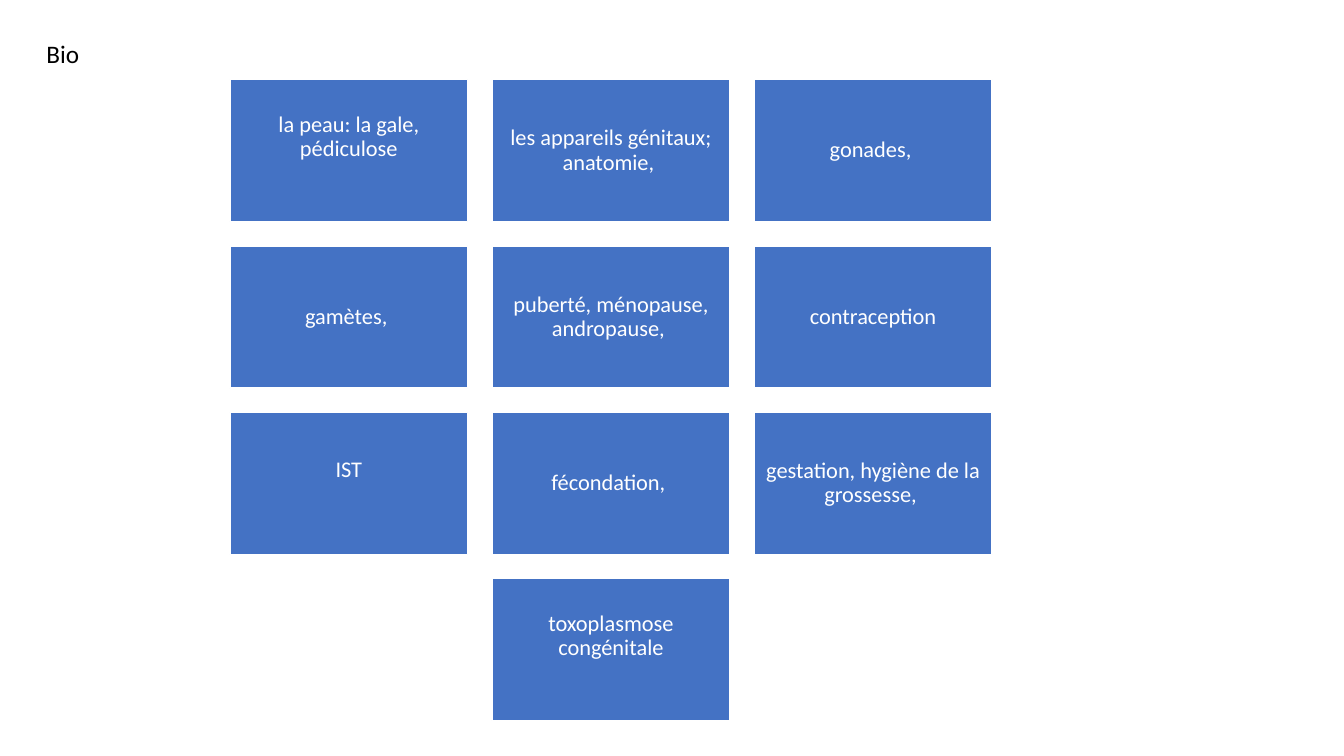
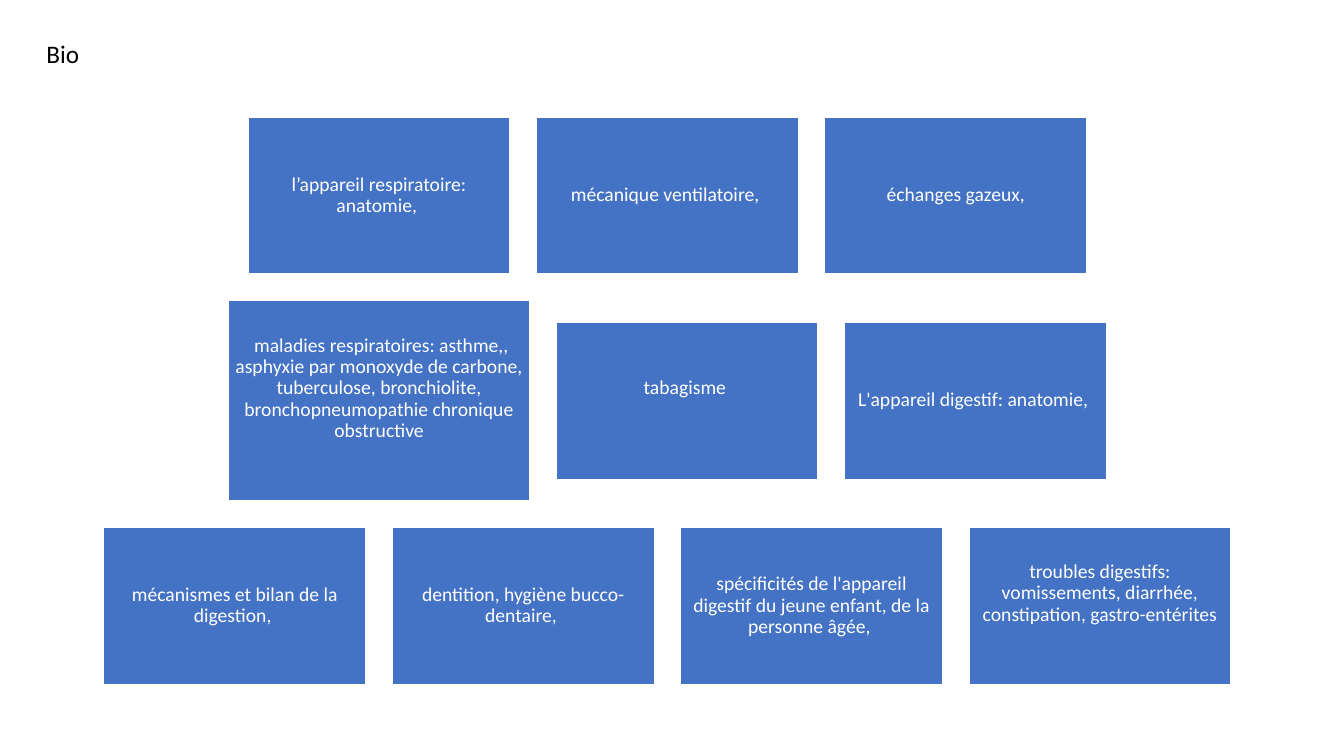
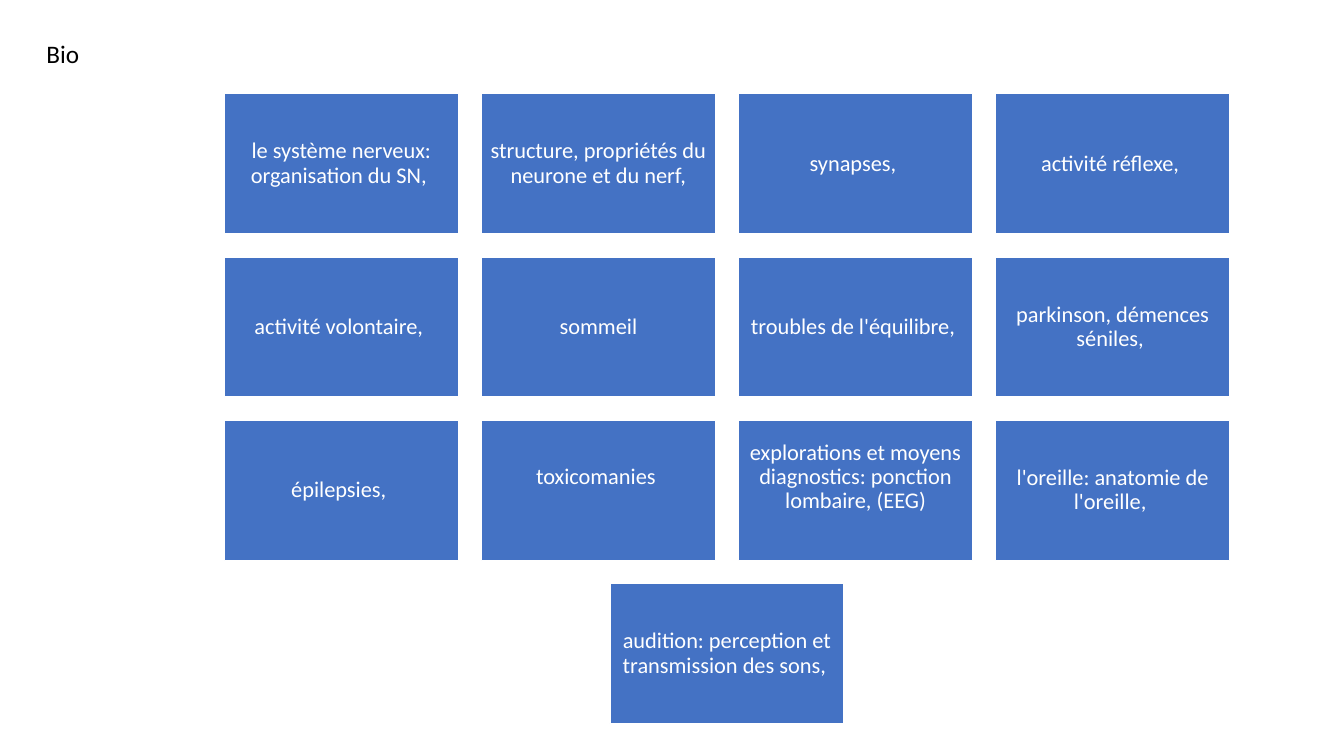
from dataclasses import dataclass

from pptx import Presentation
from pptx.dml.color import RGBColor
from pptx.enum.shapes import MSO_SHAPE
from pptx.enum.text import MSO_ANCHOR, MSO_AUTO_SIZE, PP_ALIGN
from pptx.util import Emu, Pt

RECT = MSO_SHAPE.RECTANGLE
TOP, MIDDLE = MSO_ANCHOR.TOP, MSO_ANCHOR.MIDDLE
LEFT, CENTER = PP_ALIGN.LEFT, PP_ALIGN.CENTER
NO_FIT = MSO_AUTO_SIZE.NONE

PX = 9144
SLIDE_SIZE = (1333, 750)
FONT = "Calibri"
COLORS = {"tile": "4472C4", "white": "FFFFFF", "title": "000000"}
TITLE = {"text": "Bio", "box": (36, 33, 148, 40), "pt": 18}


@dataclass
class Tile:
    text: str
    raised: bool = False
    size: tuple = None


BOARDS = [
    {
        "center": 606, "top": 79, "tile": (236, 141), "gap": 24,
        "pt": 16, "inset": 7, "raise": 26,
        "rows": [
            [Tile("la peau: la gale, pédiculose", raised=True),
             Tile("les appareils génitaux; anatomie, "),
             Tile("gonades, ")],
            [Tile("gamètes, "),
             Tile("puberté, ménopause, andropause, "),
             Tile("contraception")],
            [Tile("IST", raised=True),
             Tile("fécondation, "),
             Tile("gestation, hygiène de la grossesse, ")],
            [Tile("toxoplasmose congénitale", raised=True)],
        ],
    },
    {
        "center": 662, "top": 116, "tile": (260, 156), "gap": 26,
        "pt": 14, "inset": 6, "raise": 24,
        "rows": [
            [Tile("l’appareil respiratoire: anatomie, "),
             Tile("mécanique ventilatoire, "),
             Tile("échanges gazeux,")],
            [Tile(" maladies respiratoires: asthme,, asphyxie par monoxyde de carbone, "
                  "tuberculose, bronchiolite, bronchopneumopathie chronique obstructive",
                  raised=True, size=(299, 199)),
             Tile("tabagisme ", raised=True),
             Tile("L'appareil digestif: anatomie, ")],
            [Tile("mécanismes et bilan de la digestion, "),
             Tile("dentition, hygiène bucco-dentaire, "),
             Tile("spécificités de l'appareil digestif du jeune enfant, de la personne âgée, "),
             Tile("troubles digestifs: vomissements, diarrhée, constipation, gastro-entérites",
                  raised=True)],
        ],
    },
    {
        "center": 721, "top": 93, "tile": (232, 139), "gap": 23,
        "pt": 16, "inset": 7, "raise": 26,
        "rows": [
            [Tile("le système nerveux: organisation du SN, "),
             Tile("structure, propriétés du neurone et du nerf,"),
             Tile("synapses, "),
             Tile("activité réflexe, ")],
            [Tile("activité volontaire, "),
             Tile("sommeil"),
             Tile("troubles de l'équilibre, "),
             Tile("parkinson, démences séniles, ")],
            [Tile("épilepsies, "),
             Tile("toxicomanies ", raised=True),
             Tile("explorations et moyens diagnostics: ponction lombaire, (EEG)", raised=True),
             Tile("l'oreille: anatomie de l'oreille, ")],
            [Tile("audition: perception et transmission des sons, ")],
        ],
    },
]


def px(value):
    return Emu(round(value * PX))


def rgb(name):
    return RGBColor.from_string(COLORS[name])


def write(tf, text, pt, color, align, anchor):
    tf.word_wrap = True
    tf.auto_size = NO_FIT
    tf.vertical_anchor = anchor
    p = tf.paragraphs[0]
    p.alignment = align
    r = p.add_run()
    r.text = text
    r.font.name = FONT
    r.font.size = Pt(pt)
    r.font.color.rgb = rgb(color)
    return p


def add_title(s):
    sp = s.shapes.title
    sp.left, sp.top, sp.width, sp.height = map(px, TITLE["box"])
    write(sp.text_frame, TITLE["text"], TITLE["pt"], "title", LEFT, TOP)


def add_tile(s, tile, box, board):
    sp = s.shapes.add_shape(RECT, *map(px, box))
    sp.shadow.inherit = False
    sp.fill.solid()
    sp.fill.fore_color.rgb = rgb("tile")
    sp.line.color.rgb = rgb("white")
    sp.line.width = Pt(1)
    tf = sp.text_frame
    tf.margin_left = tf.margin_right = tf.margin_top = px(board["inset"])
    tf.margin_bottom = px(board["inset"] + tile.raised * board["raise"])
    p = write(tf, tile.text, board["pt"], "white", CENTER, MIDDLE)
    p.line_spacing = 0.9


def add_board(s, board):
    gap = board["gap"]
    top = board["top"]
    for row in board["rows"]:
        sizes = [tile.size or board["tile"] for tile in row]
        row_width = sum(w for w, h in sizes) + gap * (len(row) - 1)
        row_height = max(h for w, h in sizes)
        left = board["center"] - row_width / 2
        for tile, (w, h) in zip(row, sizes):
            add_tile(s, tile, (left, top + (row_height - h) / 2, w, h), board)
            left += w + gap
        top += row_height + gap


def main():
    prs = Presentation()
    prs.slide_width, prs.slide_height = map(px, SLIDE_SIZE)
    title_only = prs.slide_layouts[5]
    for board in BOARDS:
        s = prs.slides.add_slide(title_only)
        add_title(s)
        add_board(s, board)
    prs.save("out.pptx")


if __name__ == "__main__":
    main()
